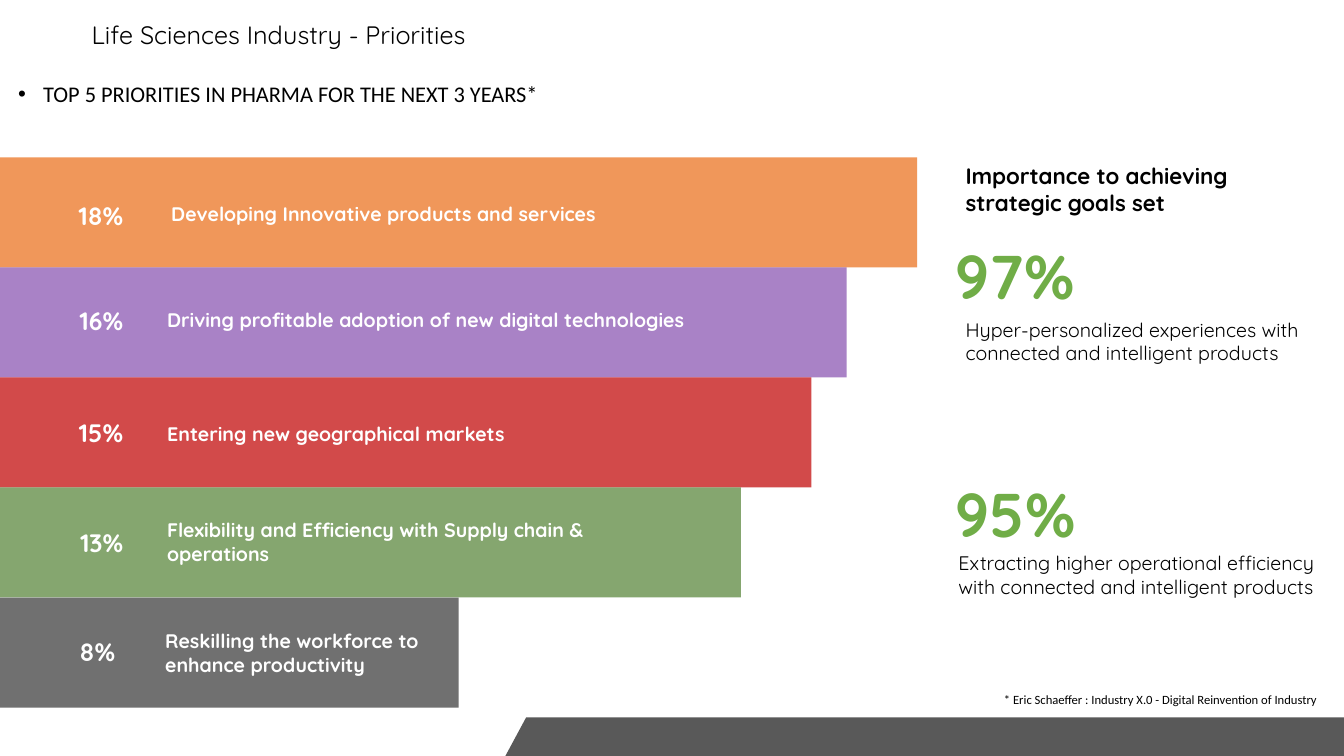
"""Build the slide on life sciences industry priorities."""
from lxml import etree
from pptx import Presentation
from pptx.dml.color import RGBColor
from pptx.enum.shapes import MSO_SHAPE
from pptx.enum.text import MSO_ANCHOR, MSO_AUTO_SIZE, PP_ALIGN
from pptx.oxml.ns import qn
from pptx.util import Pt

BLACK = RGBColor(0x00, 0x00, 0x00)
WHITE = RGBColor(0xFF, 0xFF, 0xFF)
DARK_GRAY = RGBColor(0x59, 0x59, 0x59)
GREEN = RGBColor(0x70, 0xAD, 0x47)
BAR_ORANGE = RGBColor(0xED, 0x7D, 0x31)
BAR_PURPLE = RGBColor(0x70, 0x30, 0xA0)
BAR_RED = RGBColor(0xC0, 0x00, 0x00)
BAR_GREEN = RGBColor(0x54, 0x82, 0x35)
BAR_BLACK = RGBColor(0x0D, 0x0D, 0x0D)

BAR_TOP = 112.4
BAR_HEIGHT = 78.6

presentation = Presentation()
presentation.slide_width = Pt(960)
presentation.slide_height = Pt(540)
slide = presentation.slides.add_slide(presentation.slide_layouts[6])


def add_text(text, left, top, width, height, size, color=BLACK, bold=False, font="Quicksand"):
    """Add a wrapped text box and return its shape."""
    shape = slide.shapes.add_textbox(Pt(left), Pt(top), Pt(width), Pt(height))
    text_frame = shape.text_frame
    text_frame.word_wrap = True
    text_frame.auto_size = MSO_AUTO_SIZE.SHAPE_TO_FIT_TEXT
    text_frame.text = text
    run_font = text_frame.paragraphs[0].runs[0].font
    run_font.name = font
    run_font.size = Pt(size)
    run_font.bold = bold
    run_font.color.rgb = color
    return shape


builder = slide.shapes.build_freeform(Pt(375.8), Pt(512.5), scale=1.0)
builder.add_line_segments(
    [(Pt(960), Pt(512.5)), (Pt(960), Pt(540)), (Pt(361), Pt(540))], close=True
)
footer = builder.convert_to_shape()
footer.shadow.inherit = False
footer.fill.solid()
footer.fill.fore_color.rgb = DARK_GRAY
footer.line.fill.background()

title = add_text("Life Sciences Industry - Priorities", 58.3, 12.8, 828, 26.9, 18)
title.text_frame.vertical_anchor = MSO_ANCHOR.MIDDLE
title.text_frame.paragraphs[0].line_spacing = 0.9

subtitle = add_text(
    "TOP 5 PRIORITIES IN PHARMA FOR THE NEXT 3 YEARS*", 5.8, 54, 903, 28.8, 16, font="Calibri"
)
subtitle.text_frame.margin_top = Pt(5.76)
paragraph = subtitle.text_frame.paragraphs[0]
paragraph.line_spacing = 0.9
properties = paragraph._p.get_or_add_pPr()
properties.set("marL", str(Pt(18)))
properties.set("indent", str(-Pt(18)))
etree.SubElement(properties, qn("a:buFont")).set("typeface", "Arial")
etree.SubElement(properties, qn("a:buChar")).set("char", "•")

priorities = [
    ("18%", 28.1, 139.7, "Developing Innovative products and services",
     115.2, 140.4, 471.6, BAR_ORANGE, 80, 655.2),
    ("16%", 28.1, 214.6, "Driving profitable adoption of new digital technologies",
     112.3, 216.7, 471.6, BAR_PURPLE, 60, 604.8),
    ("15%", 28.1, 294.5, "Entering new geographical markets",
     112.3, 298.1, 471.6, BAR_RED, 71, 579.6),
    ("13%", 28.1, 373, "Flexibility and Efficiency with Supply chain & operations",
     112.3, 366.5, 352, BAR_GREEN, 71, 529.2),
    ("8%", 22.3, 450.7, "Reskilling the workforce to enhance productivity",
     110.9, 445.7, 209.5, BAR_BLACK, 59, 327.6),
]
for index, priority in enumerate(priorities):
    share, share_left, share_top, label, label_left, label_top, label_width = priority[:7]
    color, opacity, bar_width = priority[7:]
    bar = slide.shapes.add_shape(
        MSO_SHAPE.RECTANGLE, 0, Pt(BAR_TOP + index * BAR_HEIGHT), Pt(bar_width), Pt(BAR_HEIGHT)
    )
    bar.shadow.inherit = False
    bar.fill.solid()
    bar.fill.fore_color.rgb = color
    bar.line.fill.background()
    color_element = bar._element.spPr.find(qn("a:solidFill")).find(qn("a:srgbClr"))
    etree.SubElement(color_element, qn("a:alpha")).set("val", str(opacity * 1000))
    share_box = add_text(share, share_left, share_top, 67, 28.8, 18, WHITE, True)
    share_box.text_frame.paragraphs[0].alignment = PP_ALIGN.RIGHT
    add_text(label, label_left, label_top, label_width, 24.5, 14, WHITE, True)

add_text("Importance to achieving strategic goals set", 682.6, 112.3, 267, 46, 16, bold=True)

goals = [
    ("97%", 169.9, "Hyper-personalized experiences with connected and intelligent products",
     682.6, 223.2, 267),
    ("95%", 339.8, "Extracting higher operational efficiency with connected and intelligent products",
     677.5, 390.2, 277.2),
]
for share, share_top, label, label_left, label_top, label_width in goals:
    text_frame = add_text(share, 682.6, share_top, 87.8, 56.9, 44, GREEN, True).text_frame
    text_frame.word_wrap = False
    text_frame.margin_left = text_frame.margin_right = text_frame.margin_top = 0
    add_text(label, label_left, label_top, label_width, 41, 14)

source = add_text(
    "* Eric Schaeffer : Industry X.0 - Digital Reinvention of Industry",
    717.1, 493.9, 231.8, 14.4, 9, font="Calibri",
)
source.text_frame.margin_left = source.text_frame.margin_right = source.text_frame.margin_top = 0

presentation.save("out.pptx")
